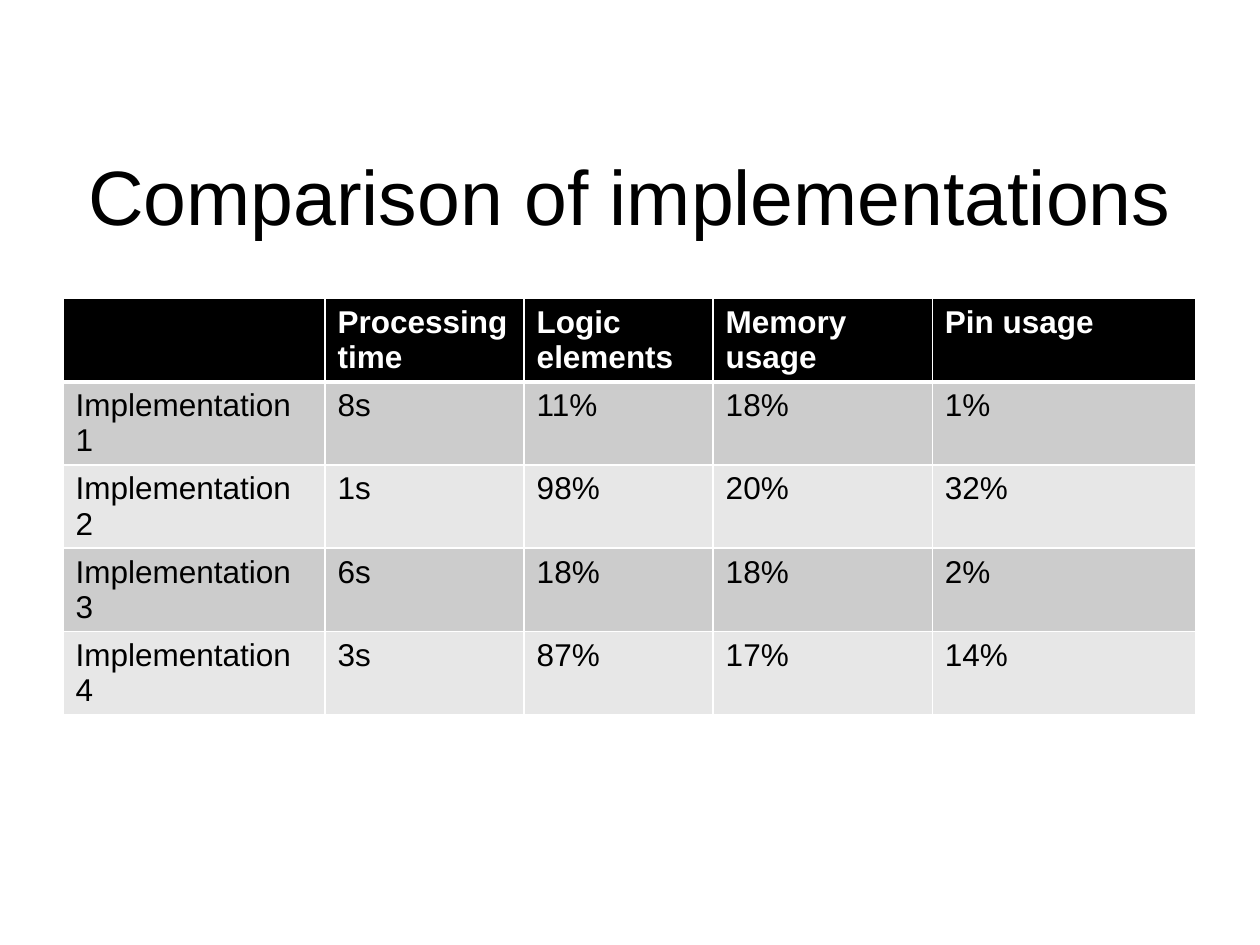
from lxml import etree
from pptx import Presentation
from pptx.dml.color import RGBColor
from pptx.enum.text import MSO_ANCHOR, PP_ALIGN
from pptx.oxml.ns import qn
from pptx.util import Inches, Pt

CENTER = PP_ALIGN.CENTER
MIDDLE = MSO_ANCHOR.MIDDLE
BLACK = RGBColor(0x00, 0x00, 0x00)
WHITE = RGBColor(0xFF, 0xFF, 0xFF)
DARK_BAND = RGBColor(0xCC, 0xCC, 0xCC)
LIGHT_BAND = RGBColor(0xE7, 0xE7, 0xE7)
FONT = "Arial"

TITLE = "Comparison of implementations"
ROWS = [
    ("", "Processing time", "Logic elements", "Memory usage", "Pin usage"),
    ("Implementation 1", "8s", "11%", "18%", "1%"),
    ("Implementation 2", "1s", "98%", "20%", "32%"),
    ("Implementation 3", "6s", "18%", "18%", "2%"),
    ("Implementation 4", "3s", "87%", "17%", "14%"),
]
COL_WIDTHS = (2.08, 1.58, 1.5, 1.74, 2.09)
ROW_HEIGHT = 0.66


def set_font(p, size, color, bold=False):
    for r in p.runs:
        r.font.name = FONT
        r.font.size = Pt(size)
        r.font.bold = bold
        r.font.color.rgb = color


def set_borders(cell, top, bottom):
    tc_pr = cell._tc.get_or_add_tcPr()
    for side, width in (("lnL", 1), ("lnR", 1), ("lnT", top), ("lnB", bottom)):
        ln = etree.SubElement(tc_pr, qn("a:" + side), w=str(Pt(width)))
        fill = etree.SubElement(ln, qn("a:solidFill"))
        etree.SubElement(fill, qn("a:srgbClr"), val=str(WHITE))


def add_title(s):
    title = s.shapes.title
    title.left, title.top = Inches(0.5), Inches(0.92)
    title.width, title.height = Inches(9), Inches(1.25)
    tf = title.text_frame
    tf.text = TITLE
    tf.vertical_anchor = MIDDLE
    p = tf.paragraphs[0]
    p.alignment = CENTER
    set_font(p, 44, BLACK)


def add_comparison(s):
    table = s.shapes.add_table(
        len(ROWS), len(COL_WIDTHS), Inches(0.5), Inches(2.37),
        Inches(sum(COL_WIDTHS)), Inches(ROW_HEIGHT * len(ROWS))).table
    for col, width in zip(table.columns, COL_WIDTHS):
        col.width = Inches(width)
    for i, values in enumerate(ROWS):
        table.rows[i].height = Inches(ROW_HEIGHT)
        header = i == 0
        band = BLACK if header else DARK_BAND if i % 2 else LIGHT_BAND
        for j, value in enumerate(values):
            cell = table.cell(i, j)
            cell.text = value
            set_font(cell.text_frame.paragraphs[0], 18,
                     WHITE if header else BLACK, header)
            set_borders(cell, 3 if i == 1 else 1, 3 if header else 1)
            cell.fill.solid()
            cell.fill.fore_color.rgb = band


def main():
    prs = Presentation()
    prs.slide_width, prs.slide_height = Inches(10), Inches(7.5)
    s = prs.slides.add_slide(prs.slide_layouts[5])
    add_title(s)
    add_comparison(s)
    prs.save("out.pptx")


if __name__ == "__main__":
    main()
